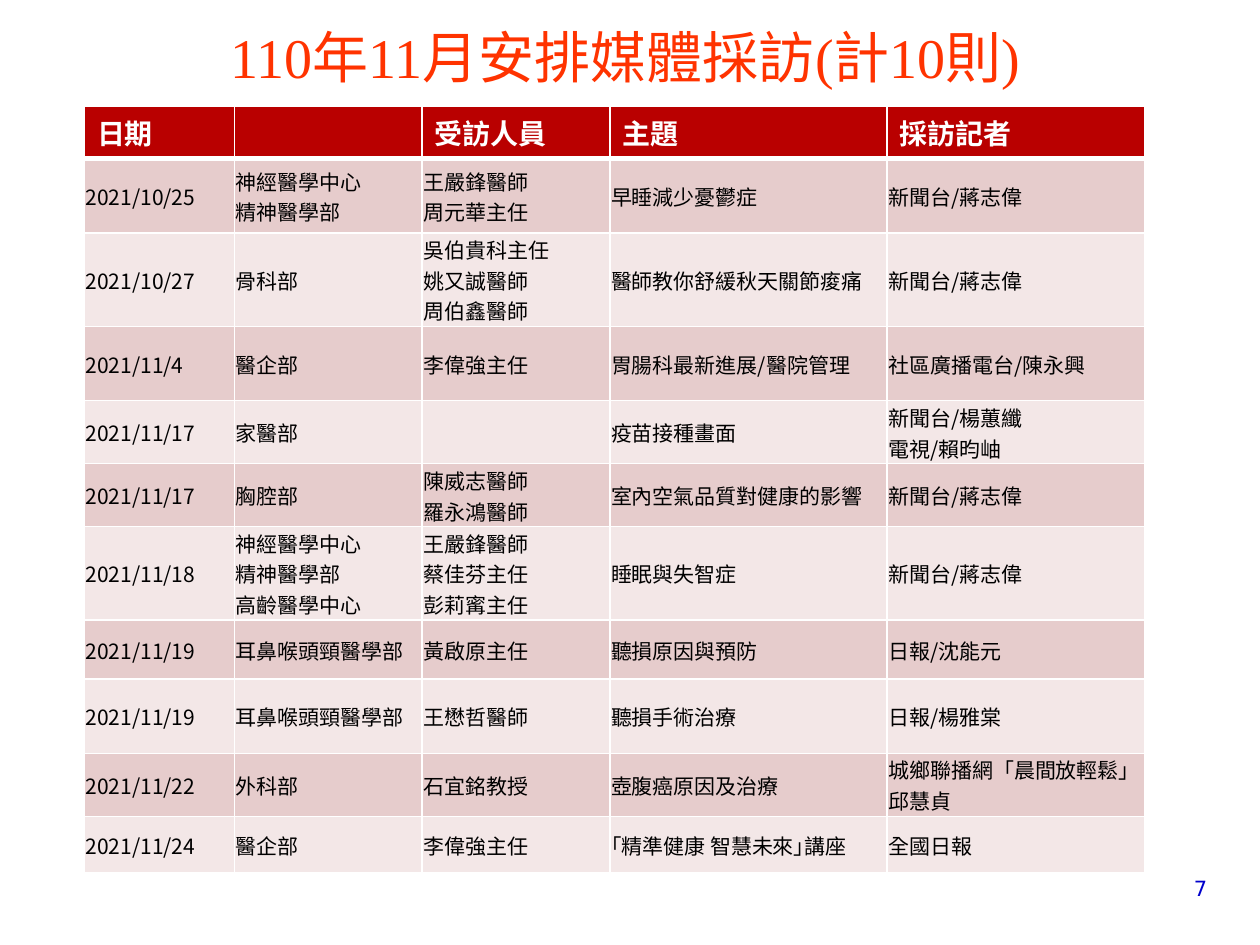
from lxml import etree
from pptx import Presentation
from pptx.dml.color import RGBColor
from pptx.enum.lang import MSO_LANGUAGE_ID
from pptx.enum.text import MSO_ANCHOR, PP_ALIGN
from pptx.oxml.ns import qn
from pptx.util import Inches, Pt

ZH_TW = MSO_LANGUAGE_ID.TRADITIONAL_CHINESE
TOP, MIDDLE, BOTTOM = MSO_ANCHOR.TOP, MSO_ANCHOR.MIDDLE, MSO_ANCHOR.BOTTOM
LEFT, CENTER, RIGHT, JUSTIFY = (
    PP_ALIGN.LEFT, PP_ALIGN.CENTER, PP_ALIGN.RIGHT, PP_ALIGN.JUSTIFY)

SANS = "Noto Sans CJK SC"
WHITE = "FFFFFF"
HEADER_FILL = "B90000"
BAND_FILLS = ("E6CCCC", "F3E7E7")
COL_WIDTHS = (1.19, 1.49, 1.49, 2.2, 2.05)
ROW_HEIGHTS = (0.42, 0.59, 0.74, 0.59, 0.5, 0.5, 0.74, 0.47, 0.59, 0.5, 0.45)
HEADERS = ("日期", "", "受訪人員", "主題", "採訪記者")
INTERVIEWS = (
    ("2021/10/25", "神經醫學中心\n精神醫學部", "王嚴鋒醫師\n周元華主任",
     "早睡減少憂鬱症", "新聞台/蔣志偉"),
    ("2021/10/27", "骨科部", "吳伯貴科主任\n姚又誠醫師\n周伯鑫醫師",
     "醫師教你舒緩秋天關節痠痛", "新聞台/蔣志偉"),
    ("2021/11/4", "醫企部", "李偉強主任", "胃腸科最新進展/醫院管理",
     "社區廣播電台/陳永興"),
    ("2021/11/17", "家醫部", "", "疫苗接種畫面", "新聞台/楊蕙纖\n電視/賴昀岫"),
    ("2021/11/17", "胸腔部", "陳威志醫師\n羅永鴻醫師",
     "室內空氣品質對健康的影響", "新聞台/蔣志偉"),
    ("2021/11/18", "神經醫學中心\n精神醫學部\n高齡醫學中心",
     "王嚴鋒醫師\n蔡佳芬主任\n彭莉寗主任", "睡眠與失智症", "新聞台/蔣志偉"),
    ("2021/11/19", "耳鼻喉頭頸醫學部", "黃啟原主任", "聽損原因與預防", "日報/沈能元"),
    ("2021/11/19", "耳鼻喉頭頸醫學部", "王懋哲醫師", "聽損手術治療", "日報/楊雅棠"),
    ("2021/11/22", "外科部", "石宜銘教授", "壺腹癌原因及治療",
     "城鄉聯播網「晨間放輕鬆」邱慧貞"),
    ("2021/11/24", "醫企部", "李偉強主任", "｢精準健康 智慧未來｣講座", "全國日報"),
)


def rgb(color):
    return RGBColor.from_string(color)


def write(tf, text, size, color, font, align, bold=False):
    p = tf.paragraphs[0]
    p.alignment = align
    for i, line in enumerate(text.split("\n")):
        if i:
            p.add_line_break()
        r = p.add_run()
        r.text = line
        r.font.name = font
        r.font.size = Pt(size)
        r.font.bold = bold
        r.font.color.rgb = rgb(color)
        r.font.language_id = ZH_TW
        ea = etree.Element(qn("a:ea"), typeface=SANS)
        r.font._element.find(qn("a:latin")).addnext(ea)


def add_text(s, box, text, size, color, font, align, anchor):
    tf = s.shapes.add_textbox(*map(Inches, box)).text_frame
    tf.word_wrap = True
    tf.vertical_anchor = anchor
    write(tf, text, size, color, font, align)


def set_borders(cell, bottom):
    tc_pr = cell._tc.get_or_add_tcPr()
    for side, width in (("L", 1), ("R", 1), ("T", 1), ("B", bottom)):
        ln = etree.SubElement(tc_pr, qn(f"a:ln{side}"), w=str(Pt(width)))
        fill = etree.SubElement(ln, qn("a:solidFill"))
        etree.SubElement(fill, qn("a:srgbClr"), val=WHITE)


def style_cell(cell, color, bottom=1):
    set_borders(cell, bottom)
    cell.fill.solid()
    cell.fill.fore_color.rgb = rgb(color)


def fill_header(table):
    for cell, text in zip(table.rows[0].cells, HEADERS):
        style_cell(cell, HEADER_FILL, bottom=3)
        if text:
            write(cell.text_frame, text, 16, WHITE, SANS, JUSTIFY, bold=True)


def fill_interview(row, texts, color):
    for cell, text in zip(row.cells, texts):
        style_cell(cell, color)
        if text:
            cell.margin_left = cell.margin_right = cell.margin_top = Inches(0.01)
            cell.margin_bottom = 0
            cell.vertical_anchor = TOP if "聯播網" in text else MIDDLE
            write(cell.text_frame, text, 12, "000000", SANS, LEFT)


def add_interview_table(s):
    table = s.shapes.add_table(
        len(ROW_HEIGHTS), len(COL_WIDTHS), Inches(0.67), Inches(0.84),
        Inches(sum(COL_WIDTHS)), Inches(sum(ROW_HEIGHTS))).table
    for column, width in zip(table.columns, COL_WIDTHS):
        column.width = Inches(width)
    for row, height in zip(table.rows, ROW_HEIGHTS):
        row.height = Inches(height)
    fill_header(table)
    for i, texts in enumerate(INTERVIEWS):
        fill_interview(table.rows[i + 1], texts, BAND_FILLS[i % 2])


def main():
    prs = Presentation()
    prs.slide_width, prs.slide_height = Inches(10), Inches(7.5)
    s = prs.slides.add_slide(prs.slide_layouts[6])
    add_text(s, (0.59, 0.44, 8.75, 0.32), "110年11月安排媒體採訪(計10則)",
             32, "FF3300", "Times New Roman", CENTER, BOTTOM)
    add_text(s, (8.94, 6.9, 0.74, 0.3), "7",
             12, "0000CC", "DejaVu Sans", RIGHT, TOP)
    add_interview_table(s)
    prs.save("out.pptx")


if __name__ == "__main__":
    main()
